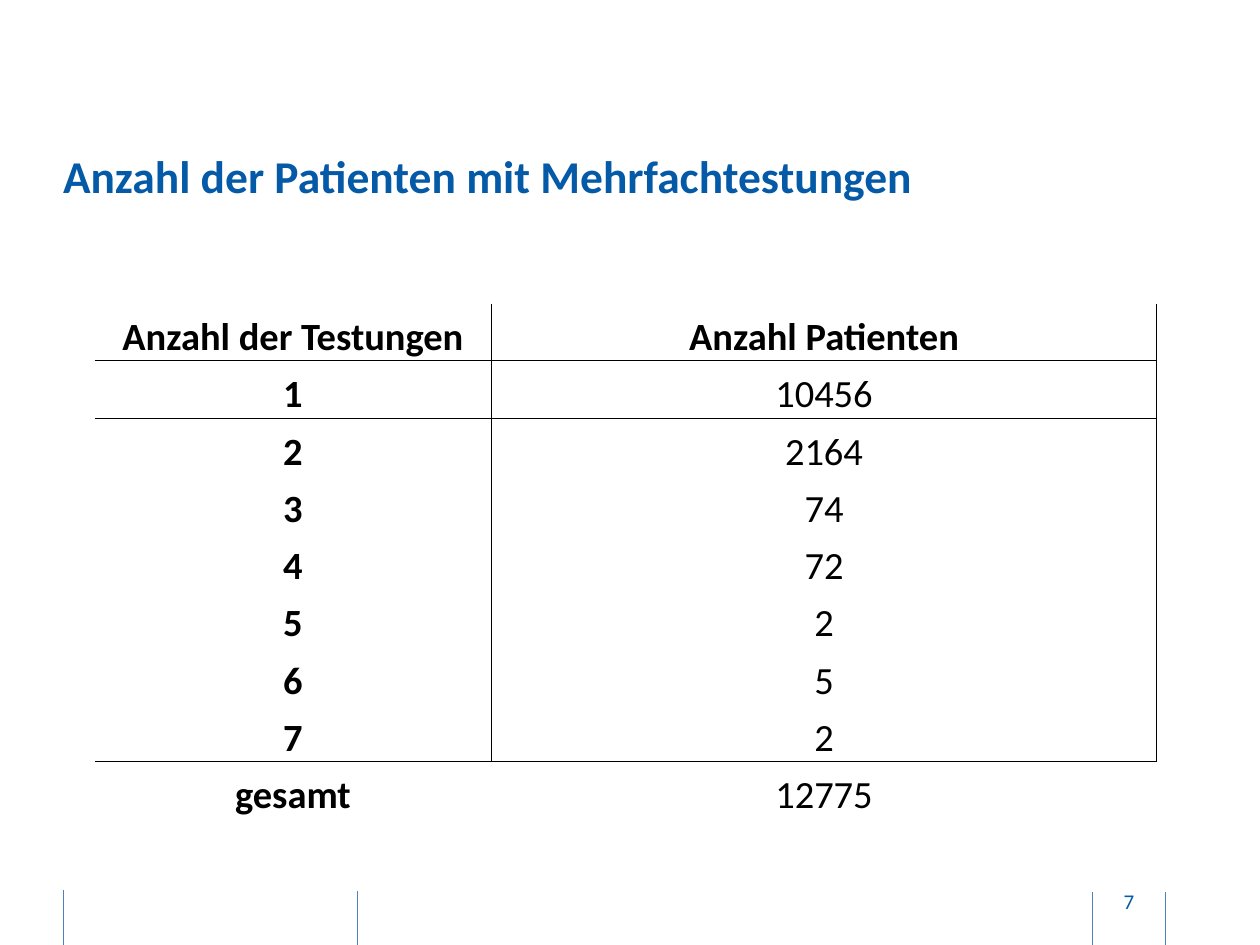
from lxml.etree import SubElement
from pptx import Presentation
from pptx.dml.color import RGBColor
from pptx.enum.shapes import MSO_CONNECTOR
from pptx.enum.text import MSO_ANCHOR, PP_ALIGN
from pptx.oxml import parse_xml
from pptx.oxml.ns import nsdecls, qn
from pptx.util import Inches, Pt

BLUE = RGBColor(0x04, 0x5A, 0xA6)
RULE_BLUE = RGBColor(0x4F, 0x81, 0xBD)
BLACK = RGBColor(0, 0, 0)
NO_GRID_STYLE = "{2D5ABB26-0587-4C30-8999-92F81FD0307C}"


def write(frame, text, align, size, color, bold=False):
    paragraph = frame.paragraphs[0]
    paragraph.text = text
    paragraph.alignment = align
    font = paragraph.runs[0].font
    font.color.rgb = color
    for name, value in {"name": "Calibri", "size": Pt(size), "bold": bold}.items():
        setattr(font, name, value)


def add_borders(cell, sides):
    # Border elements come before the fill, in the order L, R, T, B
    for position, side in enumerate(s for s in "LRTB" if s in sides):
        cell._tc.get_or_add_tcPr().insert(position, parse_xml(
            f'<a:ln{side} {nsdecls("a")} w="{Pt(0.5)}"><a:solidFill>'
            f'<a:srgbClr val="{BLACK}"/></a:solidFill></a:ln{side}>'))


prs = Presentation()
prs.slide_width, prs.slide_height = Inches(10), Inches(7.5)
slide = prs.slides.add_slide(prs.slide_layouts[5])

# Footer rules
for x, top, bottom in [(8.67, 7.08, 7.53), (2.84, 7.07, 7.51),
                       (0.5, 7.06, 7.51), (9.25, 7.08, 7.53)]:
    rule = slide.shapes.add_connector(
        MSO_CONNECTOR.STRAIGHT, Inches(x), Inches(top), Inches(x), Inches(bottom))
    rule.line.color.rgb = RULE_BLUE
    rule.line.width = Pt(0.5)
    SubElement(rule._element.spPr, qn("a:effectLst"))

# Page number
page_number = slide.shapes.add_textbox(
    Inches(8.69), Inches(6.95), Inches(0.54), Inches(0.4))
for name, value in {"word_wrap": True, "vertical_anchor": MSO_ANCHOR.MIDDLE,
                    "margin_left": 0, "margin_right": 0}.items():
    setattr(page_number.text_frame, name, value)
write(page_number.text_frame, "7", PP_ALIGN.CENTER, 12, BLUE)

# Title
title = slide.shapes.title
for name, value in {"left": 0.5, "top": 0.91, "width": 8.73, "height": 0.96}.items():
    setattr(title, name, Inches(value))
for name, value in {"word_wrap": True, "vertical_anchor": MSO_ANCHOR.MIDDLE,
                    "margin_left": 0, "margin_right": 0,
                    "margin_top": 0, "margin_bottom": 0}.items():
    setattr(title.text_frame, name, value)
write(title.text_frame, "Anzahl der Patienten mit Mehrfachtestungen",
      PP_ALIGN.LEFT, 26, BLUE, bold=True)

# Table of patients by number of tests
patients = ["10456", "2164", "74", "72", "2", "5", "2"]
rows = [("Anzahl der Testungen", "Anzahl Patienten"),
        *((str(tests), count) for tests, count in enumerate(patients, 1)),
        ("gesamt", "12775")]
total_row = len(rows) - 1
table = slide.shapes.add_table(
    len(rows), 2, Inches(0.75), Inches(2.41), Inches(8.43), Inches(4.09)).table
table.first_row = table.horz_banding = False
table._tbl.tblPr.find(qn("a:tableStyleId")).text = NO_GRID_STYLE
for column, width in zip(table.columns, (3.15, 5.28)):
    column.width = Inches(width)

cell_format = {"vertical_anchor": MSO_ANCHOR.BOTTOM, "margin_left": Inches(0.01),
               "margin_right": Inches(0.01), "margin_top": Inches(0.01),
               "margin_bottom": 0}
for r, row in enumerate(rows):
    for c, text in enumerate(row):
        cell = table.cell(r, c)
        for name, value in cell_format.items():
            setattr(cell, name, value)
        cell.fill.background()
        write(cell.text_frame, text, PP_ALIGN.CENTER, 22, BLACK,
              bold=r == 0 or c == 0)
        # Column rules stop above the total; header and body are underlined
        sides = "" if r == total_row else ("R", "LR")[c]
        if r in (0, total_row - 1):
            sides += "B"
        if r in (1, total_row):
            sides += "T"
        add_borders(cell, sides)

prs.save("out.pptx")
